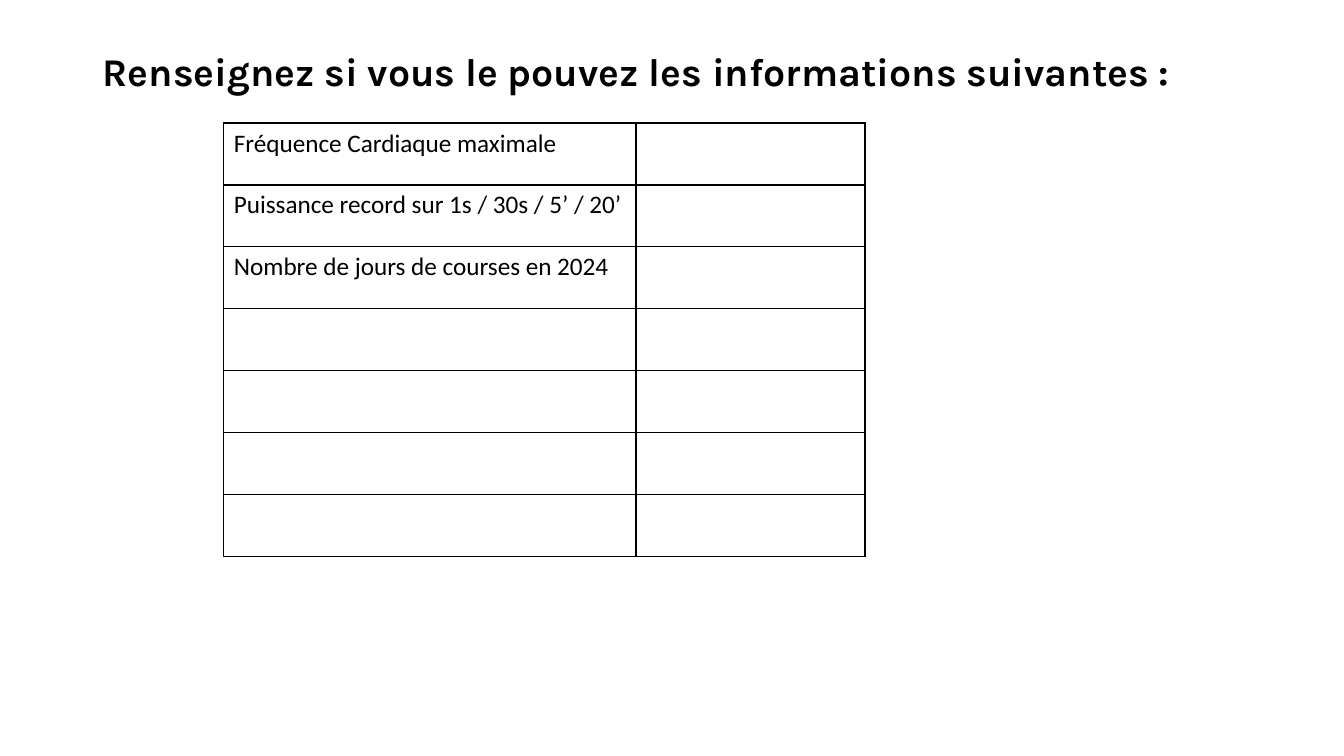
from lxml.etree import SubElement
from pptx import Presentation
from pptx.dml.color import RGBColor
from pptx.oxml.ns import qn
from pptx.util import Cm, Pt

BLACK = "000000"
QUESTIONS = [
    "Fréquence Cardiaque maximale",
    "Puissance record sur 1s / 30s / 5’ / 20’",
    "Nombre de jours de courses en 2024",
]
ROW_COUNT = 7
ROW_HEIGHT = 1.56
COLUMN_WIDTHS = [10.39, 5.77]


def color(hex_value):
    """Turn a hex string into a colour."""
    return RGBColor.from_string(hex_value)


def format_text(paragraph, font_name, size, bold=False):
    """Apply the font settings to every run of a paragraph."""
    for run in paragraph.runs:
        run.font.name = font_name
        run.font.size = Pt(size)
        run.font.bold = bold
        run.font.color.rgb = color(BLACK)


def add_heading(slide, text):
    """Add the instruction above the form."""
    heading = slide.shapes.add_textbox(Cm(2.34), Cm(1.19), Cm(29.21), Cm(12.09))
    heading.text_frame.word_wrap = True
    instruction = heading.text_frame.paragraphs[0]
    instruction.text = text
    instruction.line_spacing = 0.9
    instruction.space_before = Pt(10)
    format_text(instruction, "Karla", 28, bold=True)


def outline_cell(cell):
    """Draw a thin black border on all four sides of a cell."""
    properties = cell._tc.get_or_add_tcPr()
    for side in ("a:lnL", "a:lnR", "a:lnT", "a:lnB"):
        border = SubElement(properties, qn(side), w=str(Pt(1)))
        fill = SubElement(border, qn("a:solidFill"))
        SubElement(fill, qn("a:srgbClr"), val=BLACK)


def add_form(slide, questions):
    """Add the table with questions on the left and room for answers."""
    form = slide.shapes.add_table(
        ROW_COUNT, len(COLUMN_WIDTHS), Cm(5.64), Cm(3.1),
        Cm(sum(COLUMN_WIDTHS)), Cm(ROW_COUNT * ROW_HEIGHT),
    ).table
    form.first_row = False
    form.horz_banding = False
    for column, width in zip(form.columns, COLUMN_WIDTHS):
        column.width = Cm(width)
    for row in form.rows:
        row.height = Cm(ROW_HEIGHT)
    for cell in form.iter_cells():
        outline_cell(cell)
        cell.fill.background()
    for index, question in enumerate(questions):
        label = form.cell(index, 0).text_frame.paragraphs[0]
        label.text = question
        format_text(label, "Calibri", 18)


def main():
    """Build the slide and save it."""
    presentation = Presentation()
    presentation.slide_width = Cm(33.87)
    presentation.slide_height = Cm(19.05)
    slide = presentation.slides.add_slide(presentation.slide_layouts[6])
    add_heading(slide, "Renseignez si vous le pouvez les informations suivantes :")
    add_form(slide, QUESTIONS)
    presentation.save("out.pptx")


if __name__ == "__main__":
    main()
